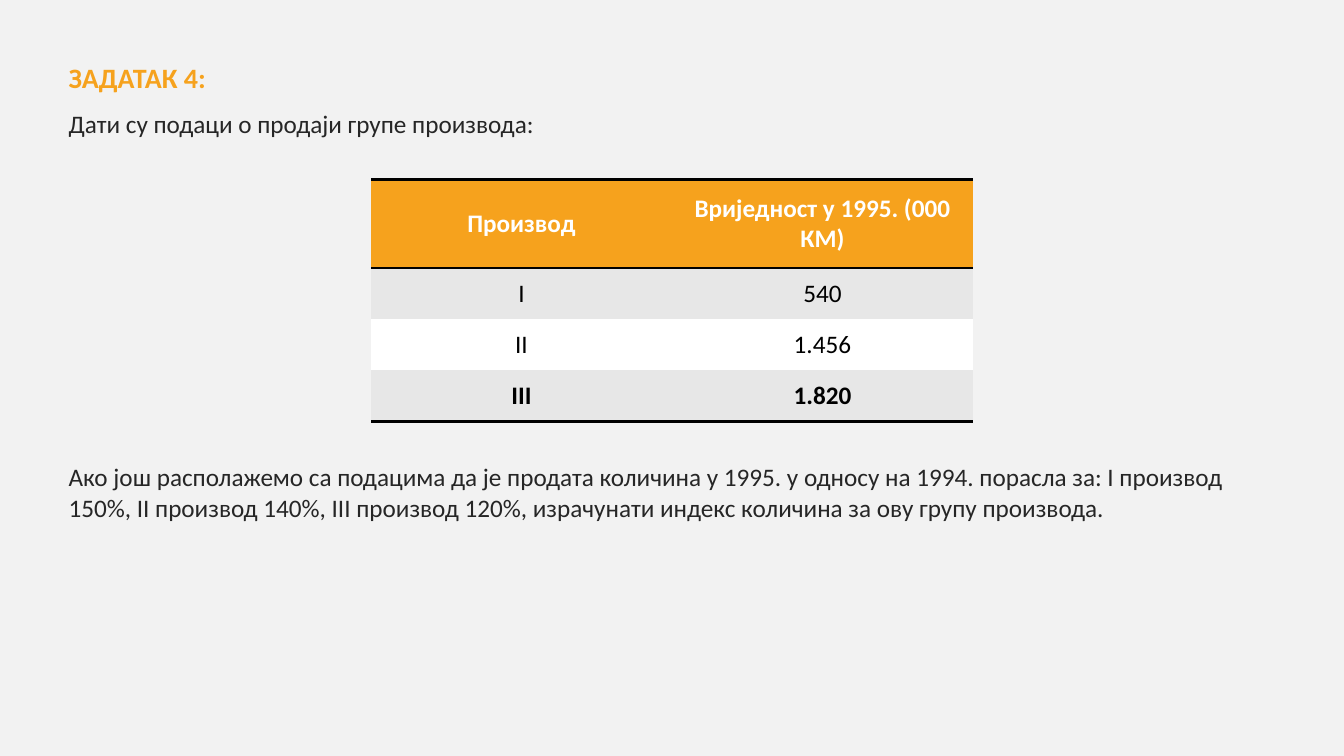
from lxml.etree import SubElement
from pptx import Presentation
from pptx.dml.color import RGBColor
from pptx.enum.text import MSO_ANCHOR, MSO_AUTO_SIZE, PP_ALIGN
from pptx.oxml.ns import qn
from pptx.util import Pt

COLORS = {
    "background": "F2F2F2",
    "accent": "F6A21D",
    "body": "262626",
    "black": "000000",
    "white": "FFFFFF",
    "band": "E7E7E7",
}
NO_STYLE_NO_GRID = "{2D5ABB26-0587-4C30-8999-92F81FD0307C}"


def format_run(run, size, color, bold):
    run.font.name = "Calibri"
    run.font.size = Pt(size)
    run.font.bold = bold
    run.font.color.rgb = RGBColor.from_string(COLORS[color])


def add_border(cell, side):
    line = SubElement(cell._tc.get_or_add_tcPr(), qn(f"a:{side}"), w=str(Pt(2)))
    line_fill = SubElement(line, qn("a:solidFill"))
    SubElement(line_fill, qn("a:srgbClr"), val=COLORS["black"])


prs = Presentation()
prs.slide_width, prs.slide_height = Pt(960), Pt(540)
slide = prs.slides.add_slide(prs.slide_layouts[1])
slide.background.fill.solid()
slide.background.fill.fore_color.rgb = RGBColor.from_string(COLORS["background"])

unused_title = slide.shapes.title.element
unused_title.getparent().remove(unused_title)

task = slide.placeholders[1]
task.left, task.top, task.width, task.height = Pt(41.8), Pt(39.6), Pt(878.4), Pt(482.4)
task_frame = task.text_frame
task_frame.auto_size = MSO_AUTO_SIZE.NONE
task_frame.vertical_anchor = MSO_ANCHOR.TOP

task_lines = [
    ("ЗАДАТАК 4:", 20, "accent", True, 10),
    ("Дати су подаци о продаји групе производа:", 18, "body", False, 10),
    (
        "Ако још располажемо са подацима да је продата количина у 1995. у односу на 1994. "
        "порасла за: I производ 150%, II производ 140%, III производ 120%, "
        "израчунати индекс количина за ову групу производа.",
        18, "body", False, 231,
    ),
]
task_frame.text = "\n".join(line[0] for line in task_lines)
for paragraph, (_, size, color, bold, gap) in zip(task_frame.paragraphs, task_lines):
    paragraph.space_before = Pt(gap)
    paragraph.line_spacing = 1.0
    properties = paragraph._p.get_or_add_pPr()
    properties.set("marL", "0")
    properties.set("indent", "0")
    SubElement(properties, qn("a:buNone"))
    format_run(paragraph.runs[0], size, color, bold)

sales_rows = [
    ("Производ", "Вриједност у 1995. (000 КМ)"),
    ("I", "540"),
    ("II", "1.456"),
    ("III", "1.820"),
]
row_looks = [
    ("accent", "white", True, ["lnT", "lnB"]),
    ("band", "black", False, []),
    ("white", "black", False, []),
    ("band", "black", True, ["lnB"]),
]
row_heights = [63.4, 36.5, 36.5, 36.5]
sales = slide.shapes.add_table(
    len(sales_rows), 2, Pt(265), Pt(128.2), Pt(430), Pt(sum(row_heights))
).table
sales._tbl.tblPr.find(qn("a:tableStyleId")).text = NO_STYLE_NO_GRID

for row, height, values, look in zip(sales.rows, row_heights, sales_rows, row_looks):
    row.height = Pt(height)
    fill_color, text_color, bold, borders = look
    for cell, value in zip(row.cells, values):
        cell.text_frame.text = value
        cell.vertical_anchor = MSO_ANCHOR.MIDDLE
        for side in borders:
            add_border(cell, side)
        cell.fill.solid()
        cell.fill.fore_color.rgb = RGBColor.from_string(COLORS[fill_color])
        paragraph = cell.text_frame.paragraphs[0]
        paragraph.alignment = PP_ALIGN.CENTER
        format_run(paragraph.runs[0], 18, text_color, bold)

prs.save("out.pptx")
